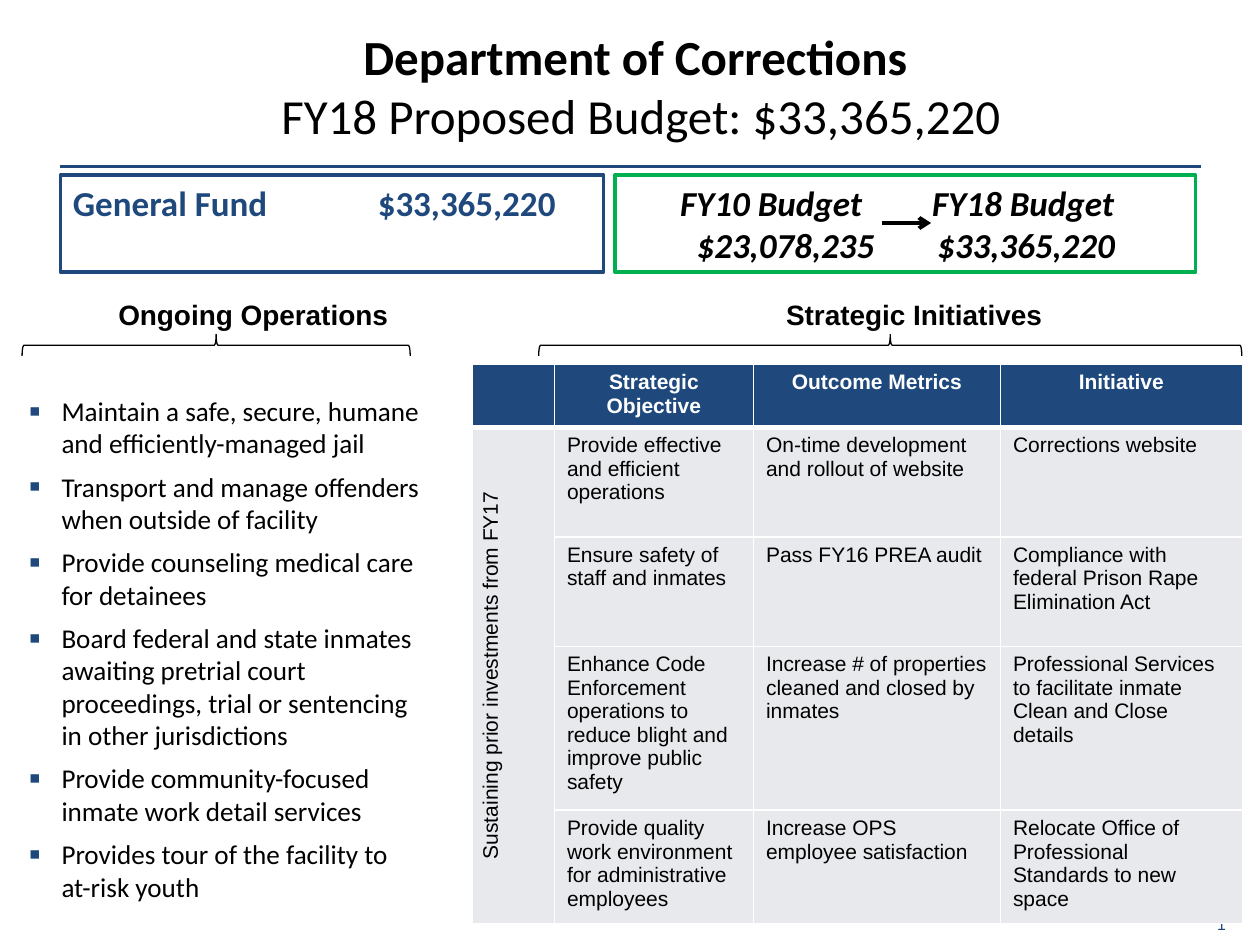
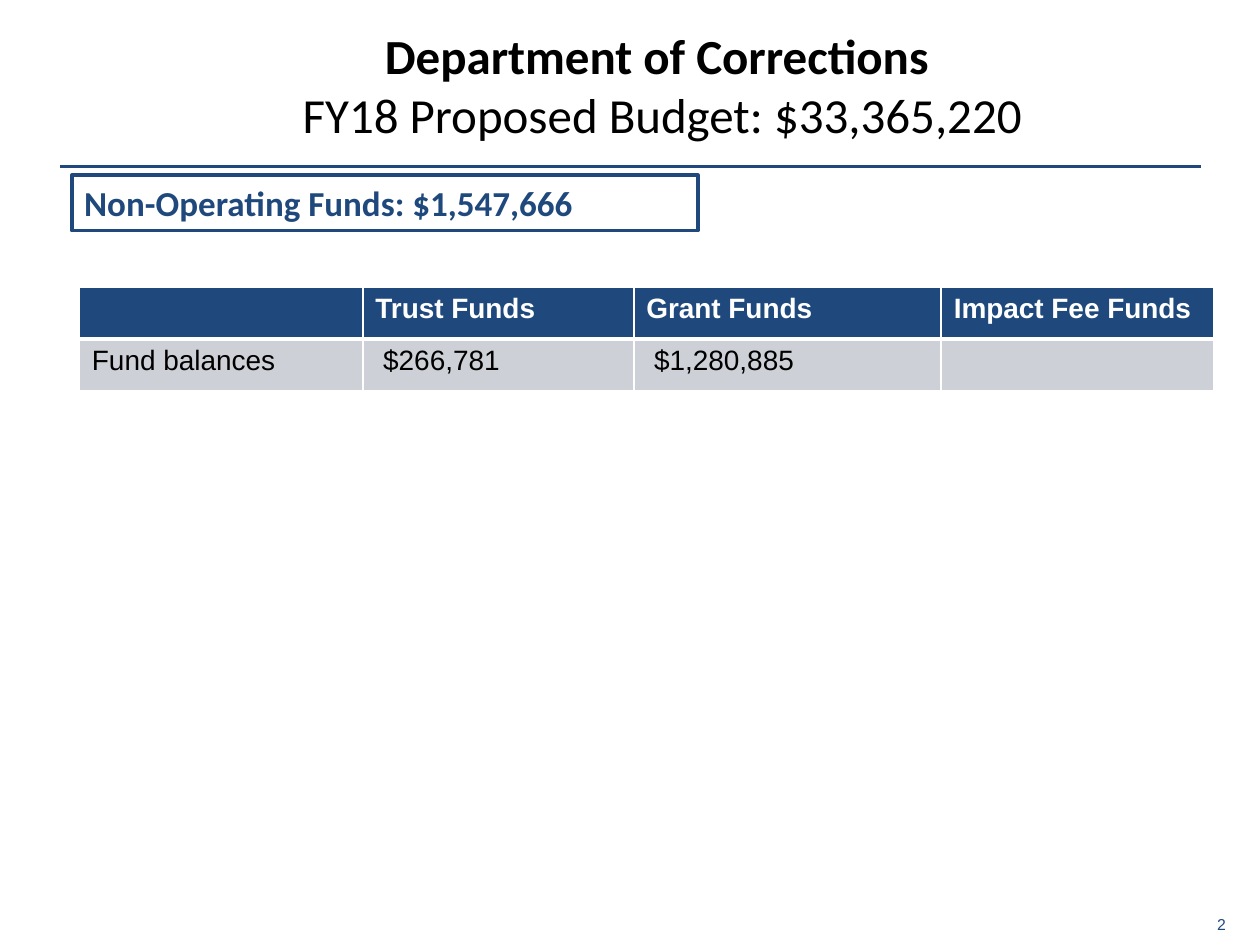
"""Build two budget slides for the Department of Corrections."""
from lxml.etree import SubElement
from pptx import Presentation
from pptx.dml.color import RGBColor
from pptx.enum.shapes import MSO_CONNECTOR, MSO_SHAPE
from pptx.enum.text import MSO_ANCHOR, PP_ALIGN
from pptx.oxml import parse_xml
from pptx.oxml.ns import nsdecls, qn
from pptx.util import Inches, Pt

NAVY = RGBColor(0x1F, 0x49, 0x7D)
GREEN = RGBColor(0x00, 0xB0, 0x50)
BLACK = RGBColor(0, 0, 0)
WHITE = RGBColor(0xFF, 0xFF, 0xFF)
PALE = RGBColor(0xE8, 0xE9, 0xEC)
GREY = RGBColor(0xCD, 0xD0, 0xD7)

TITLE = {"name": "Calibri", "size": Pt(28), "bold": True, "rgb": BLACK}
FUND = {"name": "Calibri", "size": Pt(20), "bold": True, "rgb": NAVY}
TREND = {**FUND, "italic": True, "rgb": BLACK}
LIST = {"name": "Calibri", "size": Pt(15.5), "rgb": BLACK}
HEAD = {"name": "Arial", "size": Pt(16), "bold": True, "rgb": BLACK}
PAGE = {"name": "Arial", "size": Pt(9), "rgb": NAVY}


def write(para, text, look):
    """Add a run of text with the given look."""
    run = para.add_run()
    run.text = text
    for key, value in look.items():
        setattr(run.font.color if key == "rgb" else run.font, key, value)


def grid(slide, spot, cols, highs, rows, size, fill, align):
    """Add a table with a navy header row and white cell borders."""
    left, top = spot
    table = slide.shapes.add_table(
        len(rows), len(cols), Inches(left), Inches(top),
        Inches(sum(cols)), Inches(sum(highs))).table
    for col, wide in zip(table.columns, cols):
        col.width = Inches(wide)
    for row, high in zip(table.rows, highs):
        row.height = Inches(high)
    for r, texts in enumerate(rows):
        for c, text in enumerate(texts):
            cell = table.cell(r, c)
            cell.fill.solid()
            cell.fill.fore_color.rgb = fill if r else NAVY
            if text:
                para = cell.text_frame.paragraphs[0]
                para.alignment = None if r else align
                write(para, text, {"name": "Arial", "size": Pt(size), "bold": r == 0,
                                   "rgb": BLACK if r else WHITE})
            props = cell._tc.get_or_add_tcPr()
            thick = {"L": 1, "R": 1, "T": 3 if r == 1 else 1, "B": 1 if r else 3}
            for n, (side, width) in enumerate(thick.items()):
                props.insert(n, parse_xml(
                    f'<a:ln{side} {nsdecls("a")} w="{Pt(width)}"><a:solidFill>'
                    f'<a:srgbClr val="{WHITE}"/></a:solidFill></a:ln{side}>'))
    return table


deck = Presentation()
deck.slide_width, deck.slide_height = Inches(10), Inches(7.5)
main, other = [deck.slides.add_slide(deck.slide_layouts[6]) for _ in range(2)]

lines = []
for num, (slide, left, top) in enumerate([(main, 1.18, 0.16), (other, 1.35, 0.15)], 1):
    page = slide.shapes.add_textbox(
        Inches(9.57), Inches(7.22), Inches(0.33), Inches(0.24)).text_frame
    page.word_wrap = False
    page.margin_left = page.margin_right = Inches(0.09)
    page.margin_top = page.margin_bottom = Inches(0.04)
    write(page.paragraphs[0], str(num), PAGE)

    rule = slide.shapes.add_connector(
        MSO_CONNECTOR.STRAIGHT, Inches(0.48), Inches(1.32), Inches(9.53), Inches(1.32))
    lines.append((rule, NAVY, 1.5))

    title = slide.shapes.add_textbox(
        Inches(left), Inches(top), Inches(7.76), Inches(1.04)).text_frame
    title.word_wrap = True
    title.vertical_anchor = MSO_ANCHOR.MIDDLE
    title.margin_left = Inches(0.15)
    para = title.paragraphs[0]
    para.alignment = PP_ALIGN.CENTER
    write(para, "Department of Corrections ", TITLE)
    para.add_line_break()
    write(para, "FY18 Proposed Budget: $33,365,220", {**TITLE, "bold": False})

boxes = [
    (main, 0.48, 4.31, 0.77, NAVY, FUND, [("General Fund\t$33,365,220", [2.42])]),
    (main, 4.88, 4.61, 0.77, GREEN, TREND, [
        ("\tFY10 Budget\tFY18 Budget", [0.42, 2.42]),
        ("\t$23,078,235\t$33,365,220", [0.55, 2.46])]),
    (other, 0.57, 4.97, 0.44, NAVY, FUND, [("Non-Operating Funds: $1,547,666", [])]),
]
for slide, left, wide, high, hue, look, texts in boxes:
    box = slide.shapes.add_shape(
        MSO_SHAPE.RECTANGLE, Inches(left), Inches(1.39), Inches(wide), Inches(high))
    box.shadow.inherit = False
    box.fill.background()
    lines.append((box, hue, 2))
    frame = box.text_frame
    frame.vertical_anchor = MSO_ANCHOR.TOP
    for n, (text, stops) in enumerate(texts):
        para = frame.add_paragraph() if n else frame.paragraphs[0]
        para.alignment = PP_ALIGN.LEFT
        if stops:
            tabs = SubElement(para._p.get_or_add_pPr(), qn("a:tabLst"))
            for stop in stops:
                SubElement(tabs, qn("a:tab"), pos=str(Inches(stop)), algn="l")
        write(para, text, look)

for text, left, wide in [("Ongoing Operations", 0.07, 3.88),
                         ("Strategic Initiatives", 5.36, 3.79)]:
    frame = main.shapes.add_textbox(
        Inches(left), Inches(2.31), Inches(wide), Inches(0.37)).text_frame
    frame.word_wrap = True
    frame.paragraphs[0].alignment = PP_ALIGN.CENTER
    write(frame.paragraphs[0], text, HEAD)

duties = [
    "Maintain a safe, secure, humane and efficiently-managed jail",
    "Transport and manage offenders when outside of facility",
    "Provide counseling medical care for detainees",
    "Board federal and state inmates awaiting pretrial court proceedings, "
    "trial or sentencing in other jurisdictions",
    "Provide community-focused inmate work detail services",
    "Provides tour of the facility to at-risk youth",
]
frame = main.shapes.add_textbox(
    Inches(0.13), Inches(3.08), Inches(3.32), Inches(4.28)).text_frame
frame.word_wrap = True
for n, duty in enumerate(duties):
    para = frame.add_paragraph() if n else frame.paragraphs[0]
    para.space_before = Pt(6 if n else 0)
    props = para._p.get_or_add_pPr()
    props.set("marL", str(Inches(0.26)))
    props.set("indent", str(-Inches(0.26)))
    SubElement(SubElement(props, qn("a:buClr")), qn("a:srgbClr"), val=str(NAVY))
    SubElement(props, qn("a:buSzPct"), val="125000")
    SubElement(props, qn("a:buFont"), typeface="Arial")
    SubElement(props, qn("a:buChar"), char="▪")
    write(para, duty, LIST)

goals = [
    ["", "Strategic Objective", "Outcome Metrics", "Initiative"],
    ["Sustaining prior investments from FY17",
     "Provide effective and efficient operations",
     "On-time development and rollout of website", "Corrections website"],
    ["", "Ensure safety of staff and inmates", "Pass FY16 PREA audit",
     "Compliance with federal Prison Rape Elimination Act"],
    ["", "Enhance Code Enforcement operations to reduce blight and improve public safety",
     "Increase # of properties cleaned and closed by inmates",
     "Professional Services to facilitate inmate Clean and Close details"],
    ["", "Provide quality work environment for administrative employees",
     "Increase OPS employee satisfaction",
     "Relocate Office of Professional Standards to new space"],
]
table = grid(main, (3.75, 2.89), [0.65, 1.58, 1.96, 1.92],
             [0.5, 0.87, 0.87, 1.3, 0.9], goals, 12, PALE, PP_ALIGN.CENTER)
side = table.cell(1, 0)
side.merge(table.cell(4, 0))
side.vertical_anchor = MSO_ANCHOR.MIDDLE
side.text_frame.paragraphs[0].alignment = PP_ALIGN.CENTER
side._tc.get_or_add_tcPr().set("vert", "vert270")

for left, top, high in [(6.98, -0.05, 5.58), (1.63, 1.2, 3.08)]:
    brace = main.shapes.add_shape(
        MSO_SHAPE.LEFT_BRACE, Inches(left), Inches(top), Inches(0.17), Inches(high))
    brace.rotation = 90
    brace.shadow.inherit = False
    brace.fill.background()
    lines.append((brace, BLACK, 0.75))

arrow = main.shapes.add_connector(
    MSO_CONNECTOR.STRAIGHT, Inches(7), Inches(1.77), Inches(7.39), Inches(1.77))
lines.append((arrow, BLACK, 2.25))

funds = [["", "Trust Funds", "Grant Funds", "Impact Fee Funds"],
         ["Fund balances", " $266,781", " $1,280,885", ""]]
grid(other, (0.63, 2.28), [2.25, 2.15, 2.44, 2.16], [0.41, 0.41],
     funds, 16, GREY, PP_ALIGN.LEFT)

for shape, hue, width in lines:
    shape.line.color.rgb = hue
    shape.line.width = Pt(width)
SubElement(arrow.line._get_or_add_ln(), qn("a:tailEnd"), type="arrow")
for shape, _, _ in lines:
    if shape._element.tag == qn("p:cxnSp"):
        SubElement(shape._element.spPr, qn("a:effectLst"))

deck.save("out.pptx")
